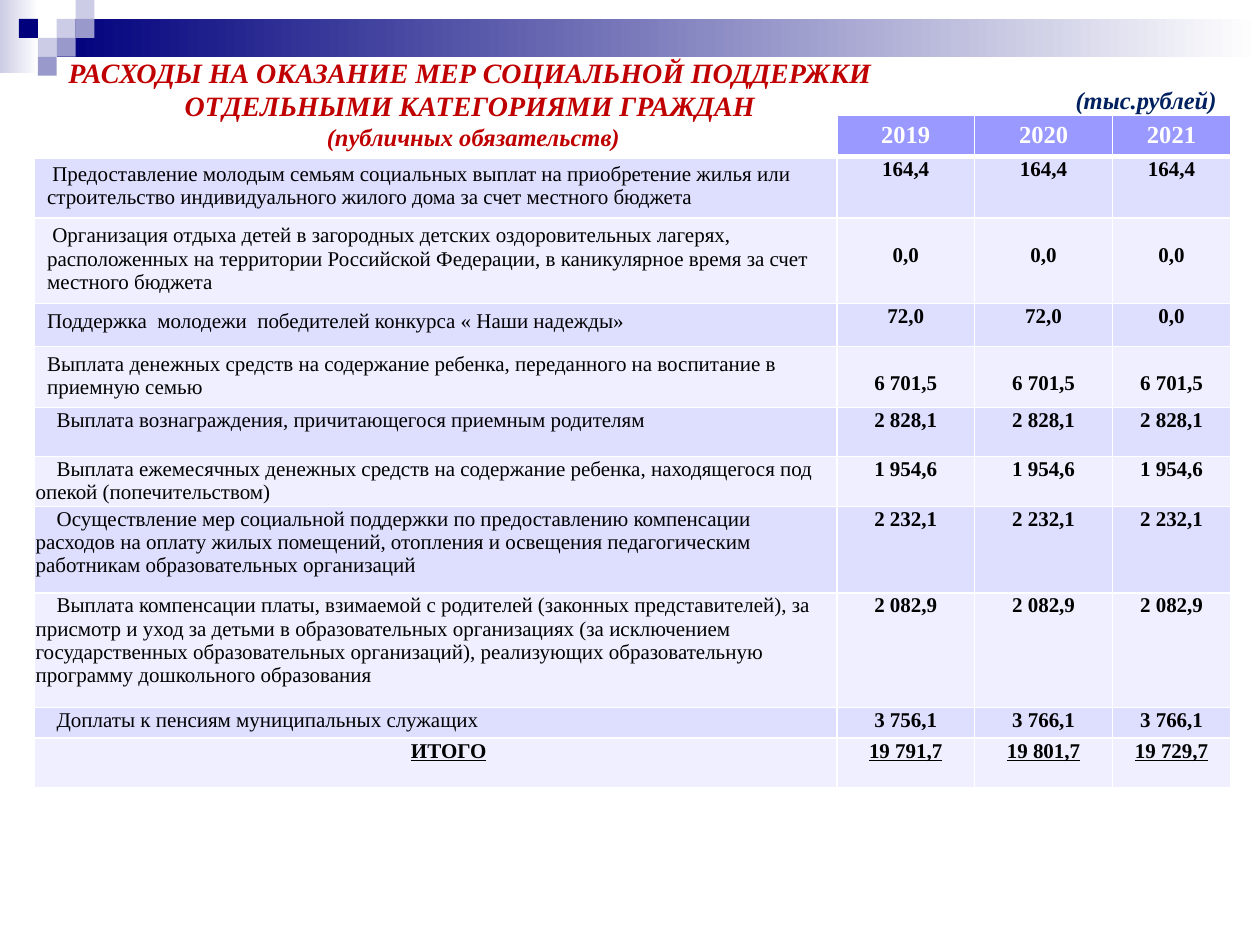
from dataclasses import dataclass

from pptx import Presentation
from pptx.dml.color import RGBColor
from pptx.enum import shapes, text
from pptx.oxml import parse_xml
from pptx.oxml import ns
from pptx.util import Pt


@dataclass(frozen=True)
class Theme:
    font: str = "Times New Roman"
    red: str = "C00000"
    blue: str = "002060"
    navy: str = "00007D"
    pale: str = "CCCCE6"
    mid: str = "9999CC"
    white: str = "FFFFFF"
    black: str = "000000"
    head: str = "9999FF"
    bands: tuple = ("DEDEFF", "EFEFFF")
    title: int = 16
    label: int = 14
    cell: int = 12


class Page:
    def __init__(self, deck, theme):
        self.theme = theme
        self.slide = deck.slides.add_slide(deck.slide_layouts[5])

    def place(self, item, box):
        item.left, item.top, item.width, item.height = map(Pt, box)

    def style(self, para, size, color, bold=True, italic=False, line=False):
        for run in para.runs:
            font = run.font
            font.name, font.size = self.theme.font, Pt(size)
            font.bold, font.italic, font.underline = bold, italic, line
            font.color.rgb = RGBColor.from_string(color)

    def rect(self, box, *colors):
        item = self.slide.shapes.add_shape(
            shapes.MSO_SHAPE.RECTANGLE, *map(Pt, box))
        item.shadow.inherit = False
        item.line.fill.background()
        if len(colors) == 1:
            item.fill.solid()
            item.fill.fore_color.rgb = RGBColor.from_string(colors[0])
            return
        item.fill.gradient()
        item.fill.gradient_angle = 0
        for stop, color in zip(item.fill.gradient_stops, colors):
            stop.color.rgb = RGBColor.from_string(color)

    def title(self, box, lines, sizes):
        item = self.slide.shapes.title
        self.slide.shapes._spTree.append(item._element)
        self.place(item, box)
        frame = item.text_frame
        frame.text = "\n".join(lines)
        frame.auto_size = text.MSO_AUTO_SIZE.NONE
        frame.vertical_anchor = text.MSO_ANCHOR.TOP
        for para, size in zip(frame.paragraphs, sizes):
            para.alignment = text.PP_ALIGN.CENTER
            self.style(para, size, self.theme.red, italic=True)

    def label(self, box, words):
        frame = self.slide.shapes.add_textbox(*map(Pt, box)).text_frame
        frame.word_wrap = False
        frame.text = words
        self.style(frame.paragraphs[0], self.theme.label, self.theme.blue,
                   italic=True)

    def edge(self, cell, width):
        line = parse_xml(
            f'<a:lnB {ns.nsdecls("a")} w="{Pt(width)}"><a:solidFill>'
            f'<a:srgbClr val="{self.theme.white}"/></a:solidFill></a:lnB>')
        cell._tc.get_or_add_tcPr().insert(0, line)

    def cell(self, cell, words, fill, size, color, center=True, bold=True,
             line=False, tight=True, drop=0, indent=0):
        cell.fill.solid()
        cell.fill.fore_color.rgb = RGBColor.from_string(fill)
        if tight:
            cell.margin_left = Pt(0.7)
            cell.margin_right = Pt(0.7 if center else 5)
            cell.margin_top, cell.margin_bottom = Pt(0.7 + drop), 0
        cell.text_frame.text = words
        para = cell.text_frame.paragraphs[0]
        align = text.PP_ALIGN
        para.alignment = align.CENTER if center else align.LEFT
        para._p.get_or_add_pPr().set("indent", str(Pt(indent)))
        self.style(para, size, color, bold, line=line)

    def table(self, spot, cols, years, rows):
        theme = self.theme
        highs = [23.5] + [row[0] for row in rows]
        grid = self.slide.shapes.add_table(
            len(highs), len(cols), *map(Pt, (*spot, sum(cols), sum(highs)))
        ).table
        for col, width in zip(grid.columns, cols):
            col.width = Pt(width)
        for row, high in zip(grid.rows, highs):
            row.height = Pt(high)
        blank = grid.cell(0, 0)
        blank.fill.background()
        blank.text_frame.paragraphs[0].font.size = Pt(theme.cell)
        self.edge(blank, 3)
        for c, year in enumerate(years, 1):
            cell = grid.cell(0, c)
            self.cell(cell, year, theme.head, theme.label, theme.white,
                      tight=False)
            self.edge(cell, 3)
        for r, (_, tight, indent, drop, words, sums) in enumerate(rows, 1):
            fill = theme.bands[(r - 1) % 2]
            total = r == len(rows)
            self.cell(grid.cell(r, 0), words, fill, theme.cell, theme.black,
                      center=total, bold=total, line=total, tight=tight,
                      indent=indent)
            for c, value in enumerate(sums, 1):
                self.cell(grid.cell(r, c), value, fill, theme.cell,
                          theme.black, line=total, drop=drop)


ROWS = [
    (35, False, 3, 0, "Предоставление молодым семьям социальных выплат на приобретение жилья или строительство индивидуального жилого дома за счет местного бюджета", ["164,4"] * 3),
    (49, False, 3, 14, "Организация отдыха детей в загородных детских оздоровительных лагерях, расположенных на территории Российской Федерации, в каникулярное время за счет местного бюджета", ["0,0"] * 3),
    (24.5, False, 0, 0, "Поддержка  молодежи  победителей конкурса « Наши надежды»", ["72,0", "72,0", "0,0"]),
    (35, False, 0, 14, "Выплата денежных средств на содержание ребенка, переданного на воспитание в приемную семью", ["6 701,5"] * 3),
    (28, True, 12, 0, "Выплата вознаграждения, причитающегося приемным родителям", ["2 828,1"] * 3),
    (28.5, True, 12, 0, "Выплата ежемесячных денежных средств на содержание ребенка, находящегося под опекой (попечительством)", ["1 954,6"] * 3),
    (49.5, True, 12, 0, "Осуществление мер социальной поддержки по предоставлению компенсации расходов на оплату жилых помещений, отопления и освещения педагогическим работникам образовательных организаций", ["2 232,1"] * 3),
    (65.5, True, 12, 0, "Выплата компенсации платы, взимаемой с родителей (законных представителей), за присмотр и уход за детьми в образовательных организациях (за исключением государственных образовательных организаций), реализующих образовательную программу дошкольного образования", ["2 082,9"] * 3),
    (17.5, True, 12, 0, "Доплаты к пенсиям муниципальных служащих", ["3 756,1", "3 766,1", "3 766,1"]),
    (28.5, True, 15, 0, "ИТОГО", ["19 791,7", "19 801,7", "19 729,7"]),
]


def main():
    deck = Presentation()
    deck.slide_width, deck.slide_height = Pt(720), Pt(540)
    theme = Theme()
    page = Page(deck, theme)
    page.rect((0, 0, 22, 42), theme.pale, theme.white)
    page.rect((32.4, 10.8, 687.6, 21.6), theme.navy, theme.white)
    side = 10.8
    tiles = [(3, 1, theme.pale), (4, 0, theme.pale), (4, 1, theme.mid),
             (2, 2, theme.pale), (1, 1, theme.navy), (3, 2, theme.mid),
             (2, 3, theme.mid)]
    for col, row, color in tiles:
        page.rect((col * side, row * side, side, side), color)
    page.table((19.7, 66), (458.5, 78.8, 78.8, 67.5),
               ("2019", "2020", "2021"), ROWS)
    page.title((11.5, 28, 518, 63),
               ("РАСХОДЫ НА ОКАЗАНИЕ МЕР СОЦИАЛЬНОЙ ПОДДЕРЖКИ ",
                "ОТДЕЛЬНЫМИ КАТЕГОРИЯМИ ГРАЖДАН ",
                "(публичных обязательств)"),
               (theme.title, theme.title, theme.label))
    page.label((607.5, 45, 96, 24.5), "(тыс.рублей)")
    deck.save("out.pptx")


if __name__ == "__main__":
    main()
